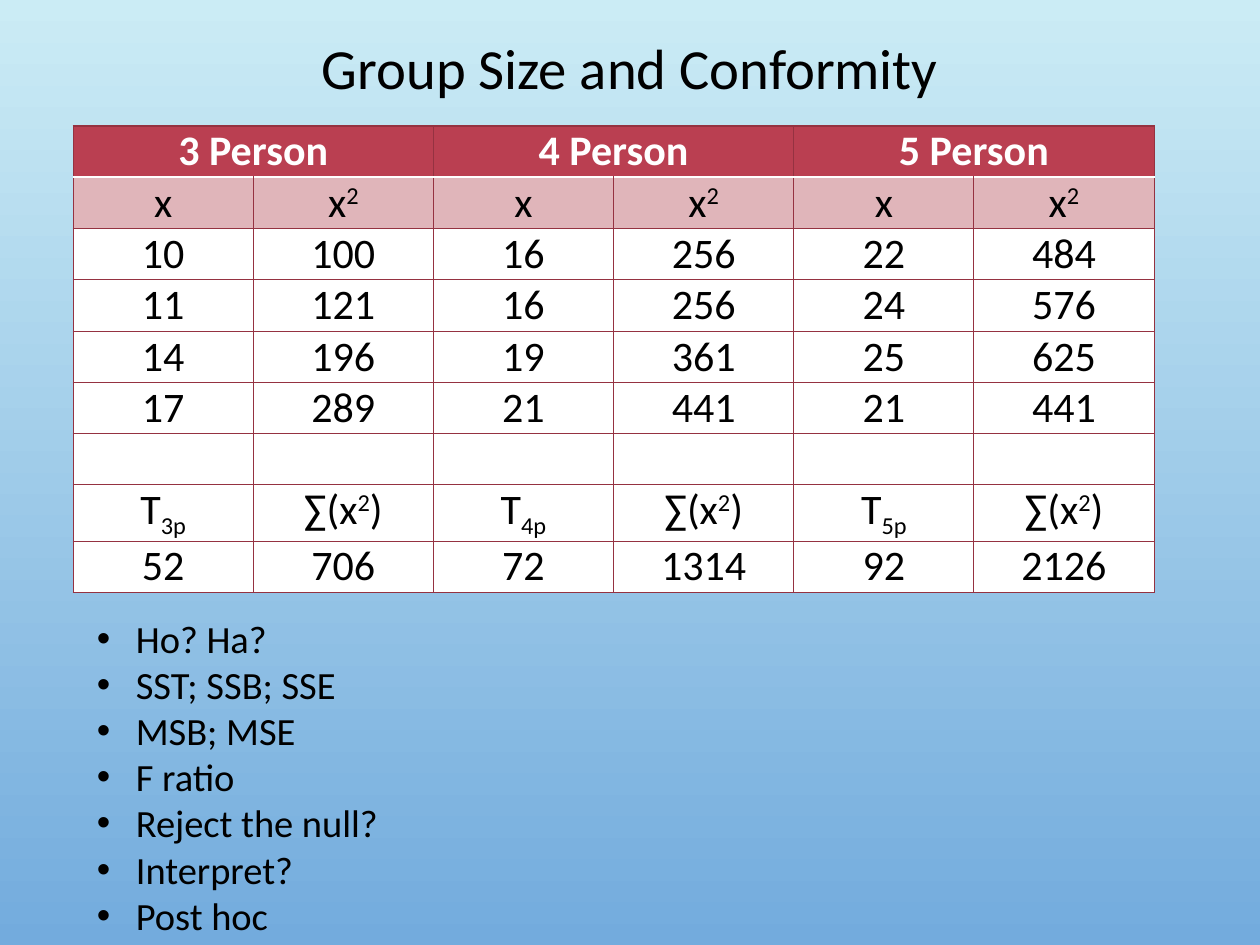
from lxml import etree
from pptx import Presentation
from pptx.dml.color import RGBColor
from pptx.enum.text import MSO_ANCHOR, MSO_AUTO_SIZE, PP_ALIGN
from pptx.oxml.ns import qn
from pptx.util import Inches, Pt

CENTER = PP_ALIGN.CENTER
MIDDLE = MSO_ANCHOR.MIDDLE
NO_FIT = MSO_AUTO_SIZE.NONE
FONT = "Calibri"


def rgb(color):
    return RGBColor.from_string(color)


def add_run(p, text, size, color="000000", bold=False, base=0):
    r = p.add_run()
    r.text = text
    r.font.name = FONT
    r.font.size = Pt(size)
    r.font.bold = bold
    r.font.color.rgb = rgb(color)
    if base:
        r.font._element.set("baseline", str(base * 1000))


prs = Presentation()
prs.slide_width = Inches(10)
prs.slide_height = Inches(7.5)
s = prs.slides.add_slide(prs.slide_layouts[5])

bg = s.background.fill
bg.gradient()
bg.gradient_angle = 270
for stop, color in zip(bg.gradient_stops, ("CBECF5", "73ABDD")):
    stop.color.rgb = rgb(color)

title = s.shapes.title
title.left, title.top = Inches(0.5), Inches(0.3)
title.width, title.height = Inches(9), Inches(0.53)
tf = title.text_frame
tf.auto_size = NO_FIT
tf.vertical_anchor = MIDDLE
p = tf.paragraphs[0]
p.alignment = CENTER
p.line_spacing = 0.9
add_run(p, "Group Size and Conformity", 32.4)

groups = [3, 4, 5]
scores = [
    [10, 100, 16, 256, 22, 484],
    [11, 121, 16, 256, 24, 576],
    [14, 196, 19, 361, 25, 625],
    [17, 289, 21, 441, 21, 441],
]
totals = [52, 706, 72, 1314, 92, 2126]

header, labels, total_labels = [], [], []
for n in groups:
    header += [[(f"{n} Person", 0)], []]
    labels += [[("x", 0)], [("x", 0), ("2", 30)]]
    total_labels += [[("T", 0), (f"{n}p", -25)],
                     [("∑(x", 0), ("2", 30), (")", 0)]]
rows = [header, labels]
rows += [[[(str(v), 0)] for v in row] for row in scores]
rows += [[[]] * 6, total_labels, [[(str(v), 0)] for v in totals]]

table = s.shapes.add_table(len(rows), 6, Inches(0.58), Inches(1),
                           Inches(8.58), Inches(3.6)).table
for column in table.columns:
    column.width = Inches(1.43)
for row in table.rows:
    row.height = Inches(0.4)
for col in range(0, 6, 2):
    table.cell(0, col).merge(table.cell(0, col + 1))

row_fills = ["BA3F51", "E0B5BA"] + ["FFFFFF"] * 7
for i, row in enumerate(rows):
    for j, runs in enumerate(row):
        cell = table.cell(i, j)
        cell.margin_left = cell.margin_right = Inches(0.07)
        cell.margin_top = cell.margin_bottom = 0
        cell.fill.solid()
        cell.fill.fore_color.rgb = rgb(row_fills[i])
        p = cell.text_frame.paragraphs[0]
        p.alignment = CENTER
        for text, base in runs:
            add_run(p, text, 24, "FFFFFF" if i == 0 else "000000", i == 0, base)
        tcPr = cell._tc.get_or_add_tcPr()
        for k, side in enumerate(("lnL", "lnR", "lnT", "lnB")):
            under_header = (i, side) in ((0, "lnB"), (1, "lnT"))
            color, width = ("FFFFFF", 1.25) if under_header else ("953241", 0.75)
            ln = etree.Element(qn(f"a:{side}"), w=str(Pt(width)))
            fill = etree.SubElement(ln, qn("a:solidFill"))
            etree.SubElement(fill, qn("a:srgbClr"), val=color)
            tcPr.insert(k, ln)

questions = ["Ho? Ha?", "SST; SSB; SSE", "MSB; MSE", "F ratio",
             "Reject the null?", "Interpret?", "Post hoc"]
box = s.shapes.add_textbox(Inches(0.67), Inches(4.83), Inches(8.42), Inches(2.69))
tf = box.text_frame
tf.word_wrap = True
for i, question in enumerate(questions):
    p = tf.paragraphs[0] if i == 0 else tf.add_paragraph()
    pPr = p._p.get_or_add_pPr()
    pPr.set("marL", str(Inches(0.31)))
    pPr.set("indent", str(Inches(-0.31)))
    etree.SubElement(pPr, qn("a:buFont"), typeface="Arial")
    etree.SubElement(pPr, qn("a:buChar"), char="•")
    add_run(p, question, 22)

prs.save("out.pptx")
